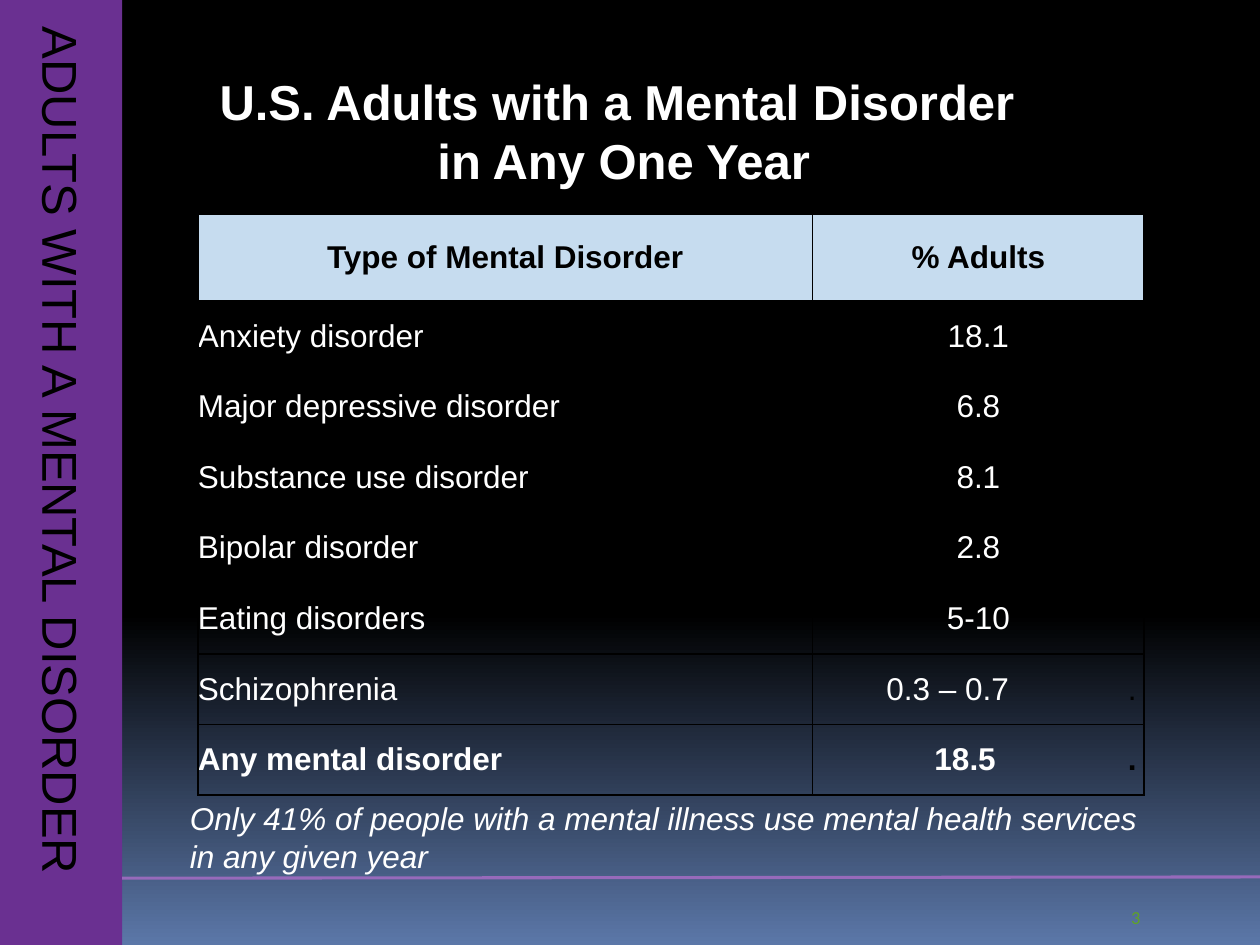
"""Build the slide on U.S. adults with a mental disorder."""
from lxml import etree
from pptx import Presentation
from pptx.dml.color import RGBColor
from pptx.enum.shapes import MSO_CONNECTOR, MSO_SHAPE
from pptx.enum.text import MSO_ANCHOR, MSO_AUTO_SIZE, PP_ALIGN
from pptx.oxml.ns import qn
from pptx.util import Inches, Pt

LEFT, CENTER = PP_ALIGN.LEFT, PP_ALIGN.CENTER
TOP, MIDDLE = MSO_ANCHOR.TOP, MSO_ANCHOR.MIDDLE
BLACK, WHITE, PURPLE = "000000", "FFFFFF", "6A3091"

SIDE = "ADULTS WITH A MENTAL DISORDER"
TITLE = "U.S. Adults with a Mental Disorder \nin Any One Year"
NOTE = ("Only 41% of people with a mental illness use mental health "
        "services in any given year")
ROWS = [
    ("Type of Mental Disorder", "% Adults"),
    ("Anxiety disorder", "18.1"),
    ("Major depressive disorder", "6.8"),
    ("Substance use disorder", "8.1"),
    ("Bipolar disorder", "2.8"),
    ("Eating disorders", "5-10"),
    ("Schizophrenia", "\t0.3 – 0.7\t."),
    ("Any mental disorder", "\t18.5\t."),
]
TABS = {6: 1.07, 7: 1.21}
DOT = 2.57
COLS = (4.88, 2.63)
HEAD, ROW = 0.69, 0.56


def color(text):
    return RGBColor.from_string(text)


def style(frame, size, ink, align=LEFT, bold=False, italic=False, face="Arial"):
    for para in frame.paragraphs:
        para.alignment = align
        for run in para.runs:
            font = run.font
            font.name, font.size = face, Pt(size)
            font.bold, font.italic = bold, italic
            font.color.rgb = color(ink)


def place(shape, box):
    shape.left, shape.top, shape.width, shape.height = map(Inches, box)


def label(slide, text, box, size, ink, **look):
    shape = slide.shapes.add_textbox(*map(Inches, box))
    shape.text_frame.word_wrap = True
    shape.text_frame.text = text
    style(shape.text_frame, size, ink, **look)
    return shape


def border(cell):
    props = cell._tc.get_or_add_tcPr()
    for side in ("a:lnL", "a:lnR", "a:lnT", "a:lnB"):
        line = etree.SubElement(props, qn(side), w=str(Pt(1)))
        fill = etree.SubElement(line, qn("a:solidFill"))
        etree.SubElement(fill, qn("a:srgbClr"), val=BLACK)


def set_tabs(para, mid):
    stops = etree.SubElement(para._p.get_or_add_pPr(), qn("a:tabLst"))
    for pos, kind in ((mid, "ctr"), (DOT, "r")):
        etree.SubElement(stops, qn("a:tab"), pos=str(Inches(pos)), algn=kind)


def fill_cell(cell, text, row, col):
    cell.margin_left = cell.margin_right = 0
    cell.margin_top = cell.margin_bottom = 0
    cell.vertical_anchor = MIDDLE
    border(cell)
    if row == 0:
        cell.fill.solid()
        cell.fill.fore_color.rgb = color("C6DCEF")
    else:
        cell.fill.background()
    frame = cell.text_frame
    para = frame.paragraphs[0]
    tabbed = "\t" in text
    if tabbed:
        value, dot = text.rsplit("\t", 1)
        para.add_run().text = value + "\t"
        para.add_run().text = dot
    else:
        frame.text = text
    align = LEFT if tabbed or (row and col == 0) else CENTER
    style(frame, 18, WHITE if row else BLACK, align,
          bold=row in (0, len(ROWS) - 1))
    if tabbed:
        para.runs[-1].font.color.rgb = color(BLACK)
        set_tabs(para, TABS[row])
    else:
        para._p.get_or_add_pPr().set("marL", str(Inches(0.07)))


def add_grid(slide):
    high = HEAD + ROW * (len(ROWS) - 1)
    table = slide.shapes.add_table(
        len(ROWS), len(COLS), Inches(1.57), Inches(1.7),
        Inches(sum(COLS)), Inches(high)).table
    for col, width in enumerate(COLS):
        table.columns[col].width = Inches(width)
    for row, texts in enumerate(ROWS):
        table.rows[row].height = Inches(ROW if row else HEAD)
        for col, text in enumerate(texts):
            fill_cell(table.cell(row, col), text, row, col)


def main():
    deck = Presentation()
    deck.slide_width, deck.slide_height = Inches(10), Inches(7.5)
    slide = deck.slides.add_slide(deck.slide_layouts[5])

    back = slide.background.fill
    back.gradient()
    back.gradient_angle = 270
    for stop, pos, ink in zip(back.gradient_stops, (0.65, 1), (BLACK, "5B77A8")):
        stop.position = pos
        stop.color.rgb = color(ink)

    band = slide.shapes.add_shape(
        MSO_SHAPE.RECTANGLE, 0, 0, Inches(0.97), Inches(7.5))
    band.shadow.inherit = False
    band.fill.solid()
    band.fill.fore_color.rgb = color(PURPLE)
    band.line.fill.background()
    label(slide, SIDE, (-3.14, 3.46, 7.26, 0.57), 28, BLACK).rotation = 90

    rule = slide.shapes.add_connector(
        MSO_CONNECTOR.STRAIGHT, Inches(0.97), Inches(6.97),
        Inches(10), Inches(6.96))
    rule.line.color.rgb = color("976ABB")
    rule.line.width = Pt(1.75)
    etree.SubElement(rule._element.spPr, qn("a:effectLst"))

    title = slide.shapes.title
    place(title, (1.37, 0.52, 7.16, 1.04))
    frame = title.text_frame
    frame.text = TITLE
    frame.auto_size = MSO_AUTO_SIZE.NONE
    frame.vertical_anchor = TOP
    style(frame, 28, WHITE, CENTER, bold=True)

    add_grid(slide)
    label(slide, NOTE, (1.41, 6.29, 7.84, 0.71), 18, WHITE, italic=True)
    label(slide, "3", (8.88, 7.14, 0.36, 0.28), 10.5, "5FA326", face="Calibri")
    deck.save("out.pptx")


if __name__ == "__main__":
    main()
